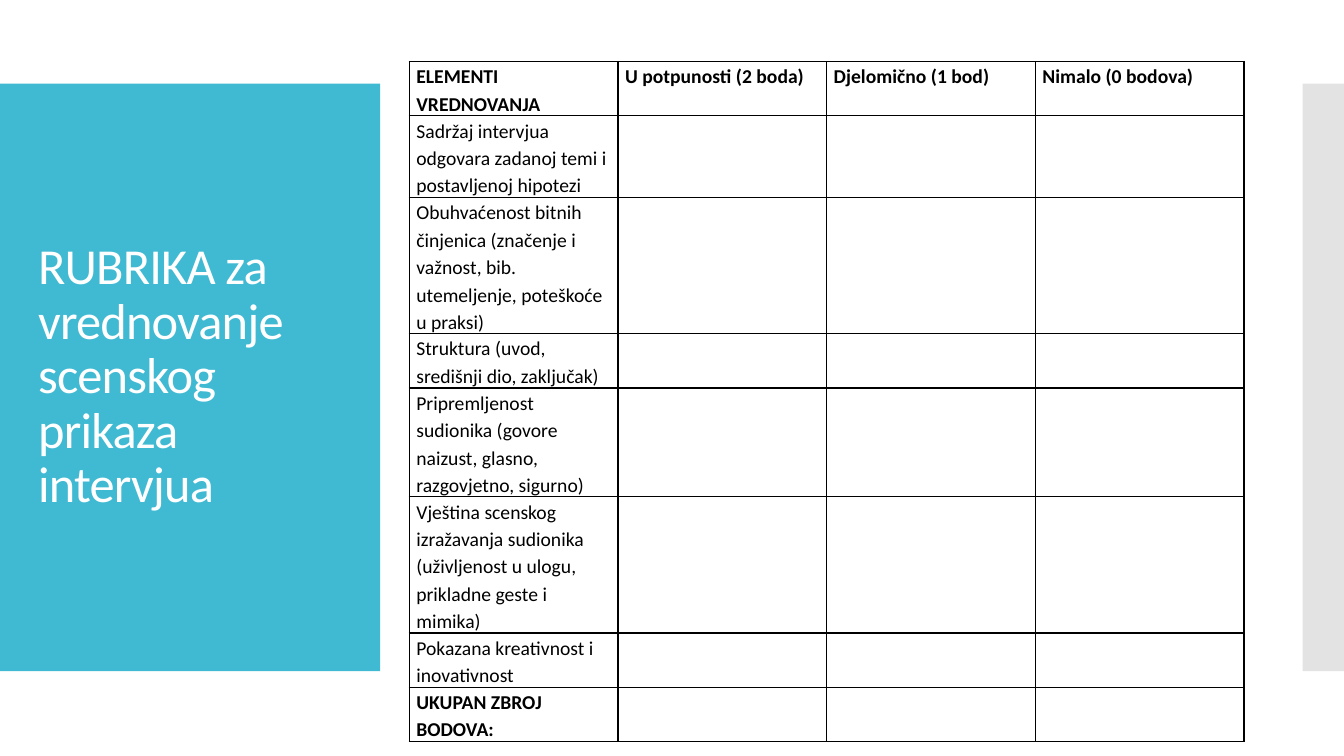
"""Build a slide with a scoring rubric for a staged interview."""
from lxml import etree
from pptx import Presentation
from pptx.dml.color import RGBColor
from pptx.enum.shapes import MSO_SHAPE
from pptx.enum.text import MSO_ANCHOR
from pptx.oxml.ns import qn
from pptx.util import Inches, Pt

RECTANGLE = MSO_SHAPE.RECTANGLE
MIDDLE = MSO_ANCHOR.MIDDLE
FONT = "Calibri"
BLACK = "000000"


def color(hex_code):
    return RGBColor.from_string(hex_code)


def write(frame, text, size=14, ink=BLACK, bold=False, line_spacing=1.15, tracking=0):
    frame.word_wrap = True
    paragraph = frame.paragraphs[0]
    paragraph.line_spacing = line_spacing
    run = paragraph.add_run()
    run.text = text
    run.font.name = FONT
    run.font.size = Pt(size)
    run.font.bold = bold
    run.font.color.rgb = color(ink)
    if tracking:
        run.font._element.set("spc", str(tracking))


deck = Presentation()
deck.slide_width = Inches(13.33)
deck.slide_height = Inches(7.5)
slide = deck.slides.add_slide(deck.slide_layouts[6])

for left, width, hex_code, opacity in [(0, 3.77, "40BAD2", 100), (12.92, 0.41, "C8C8C8", 50)]:
    panel = slide.shapes.add_shape(
        RECTANGLE, Inches(left), Inches(0.83), Inches(width), Inches(5.83))
    panel.shadow.inherit = False
    panel.line.fill.background()
    panel.fill.solid()
    panel.fill.fore_color.rgb = color(hex_code)
    if opacity < 100:
        shade = panel._element.spPr.find(qn("a:solidFill"))[0]
        etree.SubElement(shade, qn("a:alpha"), val=str(opacity * 1000))

title = slide.shapes.add_textbox(Inches(0.28), Inches(1.23), Inches(3.22), Inches(5.03))
title.text_frame.vertical_anchor = MIDDLE
write(title.text_frame, "RUBRIKA za vrednovanje scenskog prikaza intervjua",
      size=36, ink="FFFFFF", line_spacing=0.9, tracking=-60)

levels = ["U potpunosti (2 boda)", "Djelomično (1 bod)", "Nimalo (0 bodova)"]
criteria = [
    ("ELEMENTI VREDNOVANJA", 2),
    ("Sadržaj intervjua odgovara zadanoj temi i postavljenoj hipotezi", 3),
    ("Obuhvaćenost bitnih činjenica (značenje i važnost, bib. utemeljenje, "
     "poteškoće u praksi)", 5),
    ("Struktura (uvod, središnji dio, zaključak)", 2),
    ("Pripremljenost sudionika (govore naizust, glasno, razgovjetno, sigurno)", 4),
    ("Vještina scenskog izražavanja sudionika (uživljenost u ulogu, "
     "prikladne geste i mimika)", 5),
    ("Pokazana kreativnost i inovativnost", 2),
    ("UKUPAN ZBROJ BODOVA:", 2),
]
line_height = 0.27
last_row = len(criteria) - 1
rubric = slide.shapes.add_table(
    len(criteria), len(levels) + 1, Inches(4.06), Inches(0.61), Inches(8.28),
    Inches(line_height * sum(lines for _, lines in criteria))).table
rubric.first_row = False
rubric.horz_banding = False
for column in rubric.columns:
    column.width = Inches(2.07)

for row, (criterion, lines) in enumerate(criteria):
    rubric.rows[row].height = Inches(line_height * lines)
    entries = [criterion] + (levels if row == 0 else [""] * len(levels))
    for column, entry in enumerate(entries):
        cell = rubric.cell(row, column)
        cell.margin_left = cell.margin_right = Inches(0.07)
        cell.margin_top = cell.margin_bottom = 0
        if entry:
            write(cell.text_frame, entry, bold=row in (0, last_row))
        properties = cell._tc.get_or_add_tcPr()
        for side in ("lnL", "lnR", "lnT", "lnB"):
            border = etree.SubElement(properties, qn(f"a:{side}"), w=str(Pt(1)))
            stroke = etree.SubElement(border, qn("a:solidFill"))
            etree.SubElement(stroke, qn("a:srgbClr"), val=BLACK)
        cell.fill.background()

deck.save("out.pptx")
